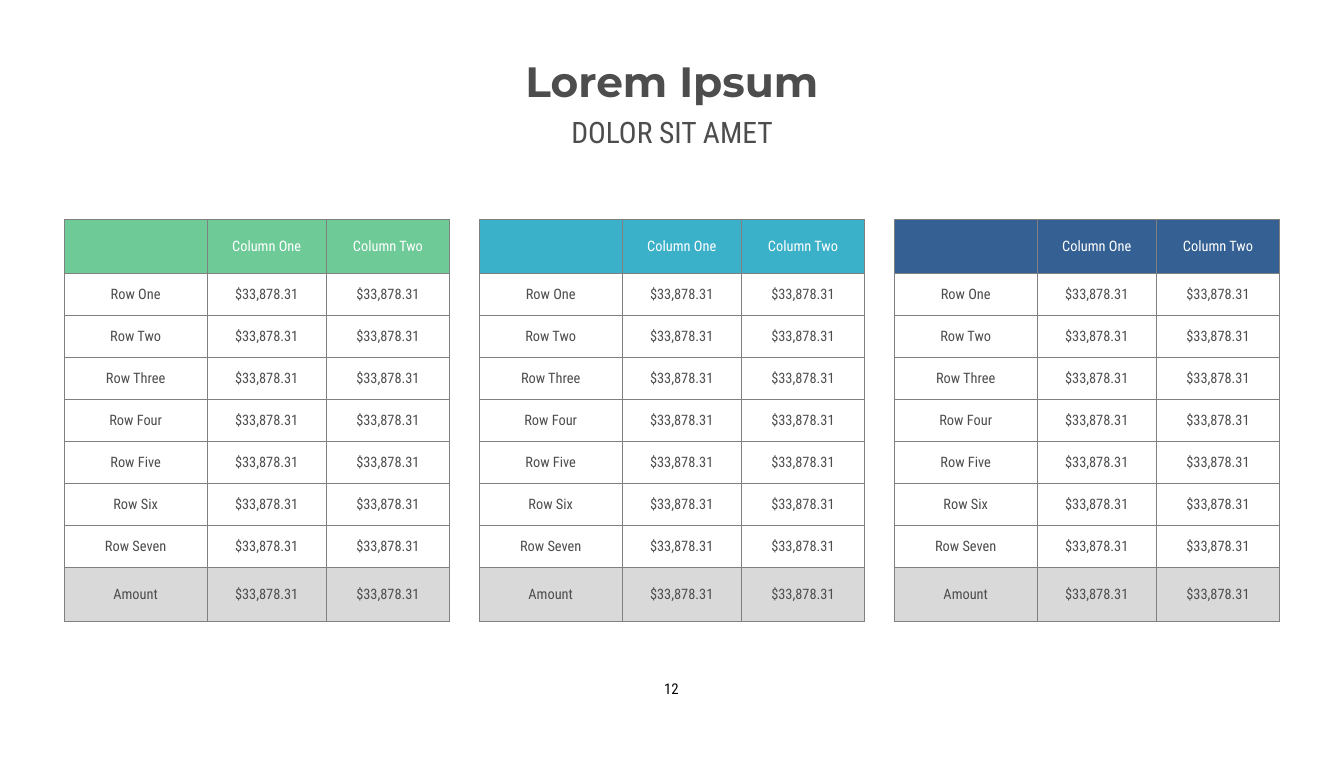
"""Build a slide with a heading and three amount tables in different header colours."""
from lxml.etree import SubElement
from pptx import Presentation
from pptx.dml.color import RGBColor
from pptx.enum.shapes import MSO_SHAPE as Shape
from pptx.enum.text import MSO_ANCHOR as Anchor, PP_ALIGN as Align
from pptx.oxml.ns import qn
from pptx.util import Inches, Pt

WHITE = RGBColor(0xFF, 0xFF, 0xFF)
BLACK = RGBColor(0x00, 0x00, 0x00)
DARK = RGBColor(0x4D, 0x4D, 0x4D)
BORDER = RGBColor(0x80, 0x80, 0x80)
TOTAL_FILL = RGBColor(0xD9, 0xD9, 0xD9)
GREEN = RGBColor(0x6E, 0xCB, 0x98)
TEAL = RGBColor(0x3B, 0xB0, 0xC9)
NAVY = RGBColor(0x34, 0x60, 0x94)

HEADING_FONT = "Montserrat"
BODY_FONT = "Roboto Condensed"
HEADINGS = [
    ("Lorem Ipsum", 0.46, 0.5, HEADING_FONT, 26.5, True),
    ("DOLOR SIT AMET", 0.97, 0.51, BODY_FONT, 18.5, False),
]
PAGE_NUMBER = "12"
HEADER = ["", "Column One", "Column Two"]
ROW_NAMES = ["Row One", "Row Two", "Row Three", "Row Four", "Row Five",
             "Row Six", "Row Seven", "Amount"]
AMOUNT = "$33,878.31"
ROWS = [HEADER] + [[name, AMOUNT, AMOUNT] for name in ROW_NAMES]
HEADER_FILLS = [GREEN, TEAL, NAVY]

SLIDE_WIDTH, SLIDE_HEIGHT = 11.69, 6.61
MARGIN = 0.56
TABLE_TOP, TABLE_HEIGHT, TABLE_PITCH = 1.91, 3.5, 3.61
COLUMN_WIDTHS = [1.24, 1.04, 1.07]
END_HEIGHT = 0.47
BODY_HEIGHT = (TABLE_HEIGHT - 2 * END_HEIGHT) / (len(ROWS) - 2)
INSET = 0.02


def write(frame, text, font_name, size, color, bold=False):
    """Put one centred paragraph into a text frame."""
    para = frame.paragraphs[0]
    para.text = text
    para.alignment = Align.CENTER
    para.font.name = font_name
    para.font.size = Pt(size)
    para.font.bold = bold
    para.font.color.rgb = color
    return para


def add_heading(page, text, top, height, font_name, size, bold):
    """Add a centred line of text across the page."""
    box = page.shapes.add_textbox(Inches(MARGIN), Inches(top),
                                  Inches(SLIDE_WIDTH - 2 * MARGIN), Inches(height))
    frame = box.text_frame
    frame.word_wrap = True
    frame.margin_top = frame.margin_bottom = Inches(INSET)
    write(frame, text, font_name, size, DARK, bold)


def add_page_number(page):
    """Add the page number in an unfilled circle."""
    circle = page.shapes.add_shape(Shape.OVAL, Inches(5.68), Inches(5.81),
                                   Inches(0.32), Inches(0.32))
    circle.shadow.inherit = False
    circle.fill.background()
    circle.line.fill.background()
    frame = circle.text_frame
    frame.word_wrap = False
    frame.vertical_anchor = Anchor.MIDDLE
    frame.margin_left = frame.margin_right = frame.margin_top = frame.margin_bottom = 0
    write(frame, PAGE_NUMBER, BODY_FONT, 9.3, BLACK).line_spacing = Pt(14.1)


def style_cell(cell, fill):
    """Set the insets, border and fill of a table cell."""
    cell.vertical_anchor = Anchor.MIDDLE
    cell.margin_left = cell.margin_right = Inches(INSET)
    cell.margin_top = cell.margin_bottom = Inches(INSET)
    properties = cell._tc.get_or_add_tcPr()
    for side in ("a:lnL", "a:lnR", "a:lnT", "a:lnB"):
        line = SubElement(properties, qn(side), w=str(Pt(0.5)))
        solid = SubElement(line, qn("a:solidFill"))
        SubElement(solid, qn("a:srgbClr"), val=str(BORDER))
    cell.fill.solid()
    cell.fill.fore_color.rgb = fill


def add_amount_table(page, left, header_fill):
    """Add one table with a coloured header and a grey total row."""
    table = page.shapes.add_table(
        len(ROWS), len(HEADER), Inches(left), Inches(TABLE_TOP),
        Inches(sum(COLUMN_WIDTHS)), Inches(TABLE_HEIGHT)).table
    for column, width in zip(table.columns, COLUMN_WIDTHS):
        column.width = Inches(width)
    last = len(ROWS) - 1
    fills = {0: header_fill, last: TOTAL_FILL}
    for index, texts in enumerate(ROWS):
        table.rows[index].height = Inches(END_HEIGHT if index in fills else BODY_HEIGHT)
        for cell, text in zip(table.rows[index].cells, texts):
            style_cell(cell, fills.get(index, WHITE))
            write(cell.text_frame, text, BODY_FONT, 9, DARK if index else WHITE)


def main():
    """Build and save the deck."""
    deck = Presentation()
    deck.slide_width = Inches(SLIDE_WIDTH)
    deck.slide_height = Inches(SLIDE_HEIGHT)
    page = deck.slides.add_slide(deck.slide_layouts[6])
    add_page_number(page)
    for heading in HEADINGS:
        add_heading(page, *heading)
    for index, fill in enumerate(HEADER_FILLS):
        add_amount_table(page, MARGIN + index * TABLE_PITCH, fill)
    deck.save("out.pptx")


if __name__ == "__main__":
    main()
